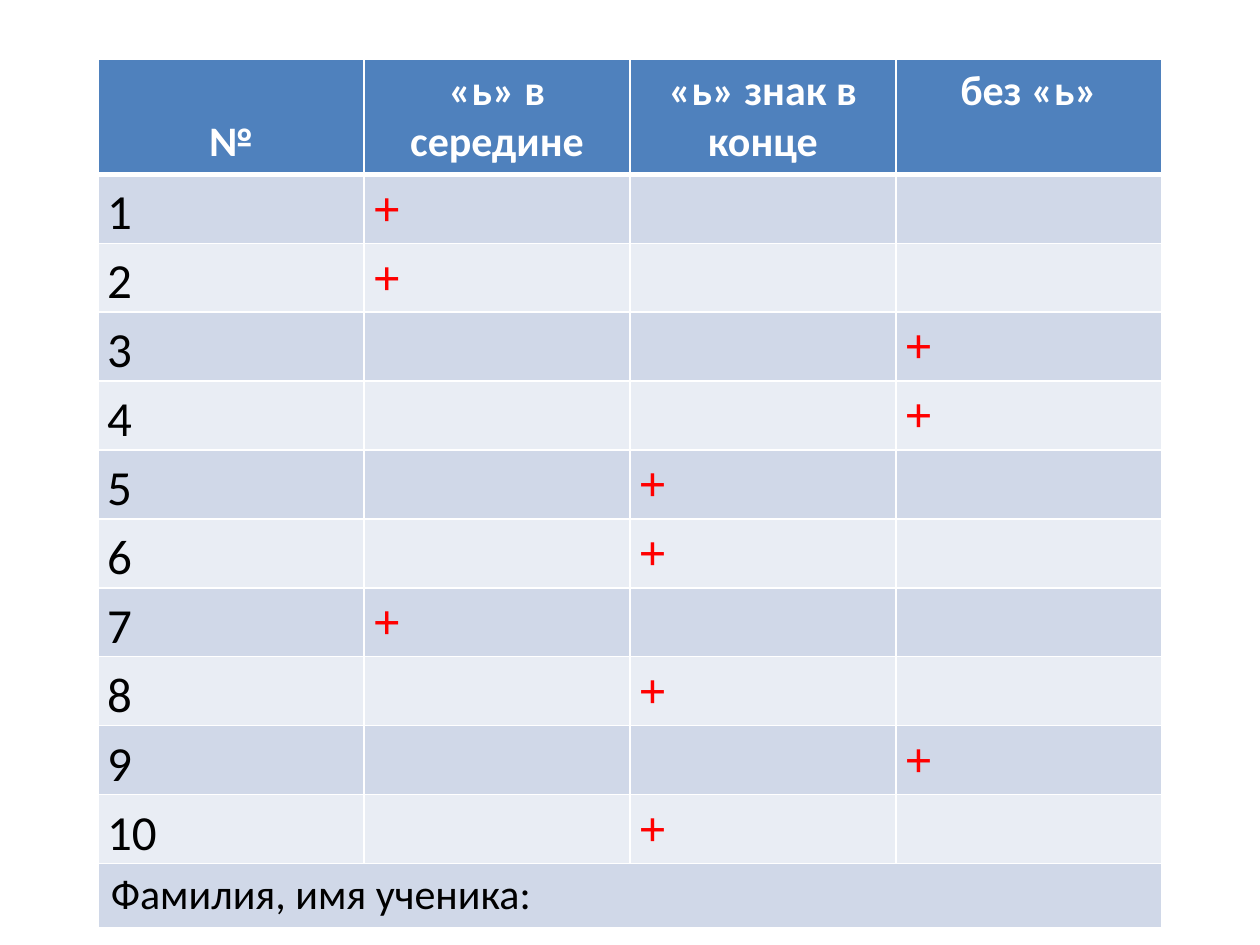
from dataclasses import dataclass

from lxml.etree import SubElement
from pptx import Presentation
from pptx.dml.color import RGBColor as RGB
from pptx.enum.text import MSO_ANCHOR as ANCHOR, PP_ALIGN as ALIGN
from pptx.oxml.ns import qn
from pptx.util import Inches, Pt


@dataclass(frozen=True)
class Theme:
    head: str = "4F81BD"
    bands: tuple = ("D0D8E8", "E9EDF4")
    rule: str = "FFFFFF"
    head_text: str = "FFFFFF"
    text: str = "000000"
    mark: str = "FF0000"
    font: str = "Calibri"
    mark_font: str = "Times New Roman"
    label_size: int = 24
    answer_size: int = 28


THEME = Theme()
HEADINGS = ["№", "«ь» в середине", "«ь» знак в конце", "без «ь»"]
MIDDLE, END, WITHOUT = 1, 2, 3
ANSWERS = [MIDDLE, MIDDLE, WITHOUT, WITHOUT, END, END, MIDDLE, END, WITHOUT, END]
COLUMN_WIDTH, HEAD_HEIGHT, ROW_HEIGHT = 2.11, 0.85, 0.49


def write(cell, text, size, color, bold=False, font=THEME.font, **layout):
    cell.text = text
    paragraph = cell.text_frame.paragraphs[0]
    for name, value in layout.items():
        setattr(paragraph, name, value)
    style = paragraph.runs[0].font
    for name, value in {"size": Pt(size), "bold": bold, "name": font}.items():
        setattr(style, name, value)
    style.color.rgb = RGB.from_string(color)


def paint(cell, fill, top=1, bottom=1):
    """Fill the cell and rule its four sides, widths in points."""
    properties = cell._tc.get_or_add_tcPr()
    for side, width in {"L": 1, "R": 1, "T": top, "B": bottom}.items():
        line = SubElement(properties, qn(f"a:ln{side}"), w=str(Pt(width)))
        SubElement(SubElement(line, qn("a:solidFill")), qn("a:srgbClr"), val=THEME.rule)
    cell.fill.solid()
    cell.fill.fore_color.rgb = RGB.from_string(fill)


deck = Presentation()
deck.slide_width, deck.slide_height = Inches(10), Inches(7.5)
slide = deck.slides.add_slide(deck.slide_layouts[6])

row_count, column_count = len(ANSWERS) + 2, len(HEADINGS)
table = slide.shapes.add_table(
    row_count, column_count, Inches(0.78), Inches(0.47),
    Inches(COLUMN_WIDTH * column_count),
    Inches(HEAD_HEIGHT + ROW_HEIGHT * (row_count - 1))).table
for column in table.columns:
    column.width = Inches(COLUMN_WIDTH)
for number, row in enumerate(table.rows):
    row.height = Inches(ROW_HEIGHT if number else HEAD_HEIGHT)
    for cell in row.cells:
        if number == 0:
            paint(cell, THEME.head, bottom=3)
        else:
            paint(cell, THEME.bands[(number - 1) % 2], top=3 if number == 1 else 1)

for column, heading in enumerate(HEADINGS):
    write(table.cell(0, column), heading, THEME.label_size, THEME.head_text,
          bold=True, alignment=ALIGN.CENTER)
table.cell(0, 0).vertical_anchor = ANCHOR.BOTTOM

margins = {"margin_left": Inches(0.07), "margin_right": Inches(0.07),
           "margin_top": 0, "margin_bottom": 0}
for number, answer in enumerate(ANSWERS, start=1):
    number_cell, mark_cell = table.cell(number, 0), table.cell(number, answer)
    write(number_cell, str(number), THEME.answer_size, THEME.text, line_spacing=1.15)
    write(mark_cell, "+", THEME.answer_size, THEME.mark, bold=True,
          font=THEME.mark_font, line_spacing=1.15, space_after=Pt(10))
    for cell in (number_cell, mark_cell):
        for name, value in margins.items():
            setattr(cell, name, value)

pupil = table.cell(row_count - 1, 0)
pupil.merge(table.cell(row_count - 1, column_count - 1))
write(pupil, "Фамилия, имя ученика:", THEME.label_size, THEME.text)

deck.save("out.pptx")
